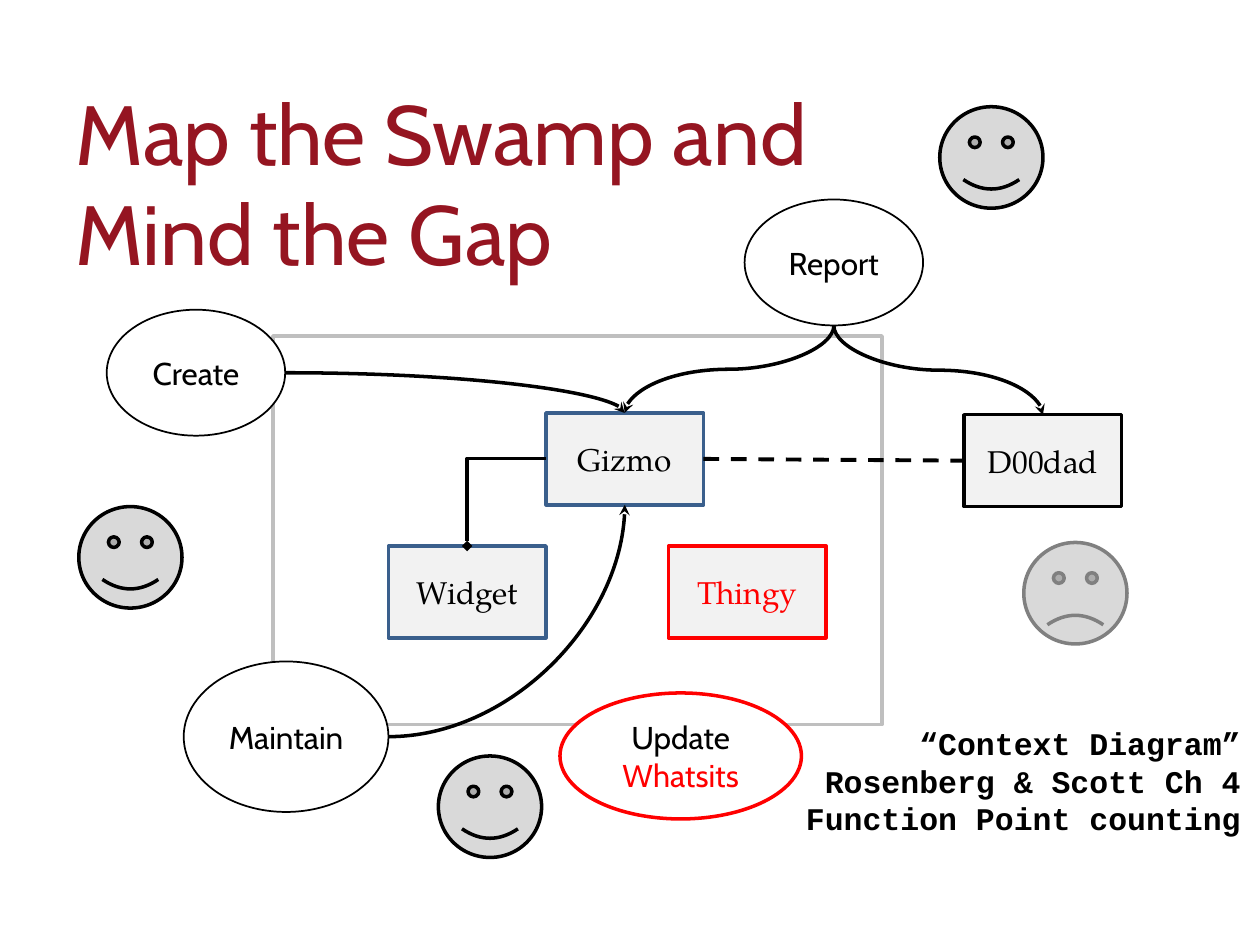
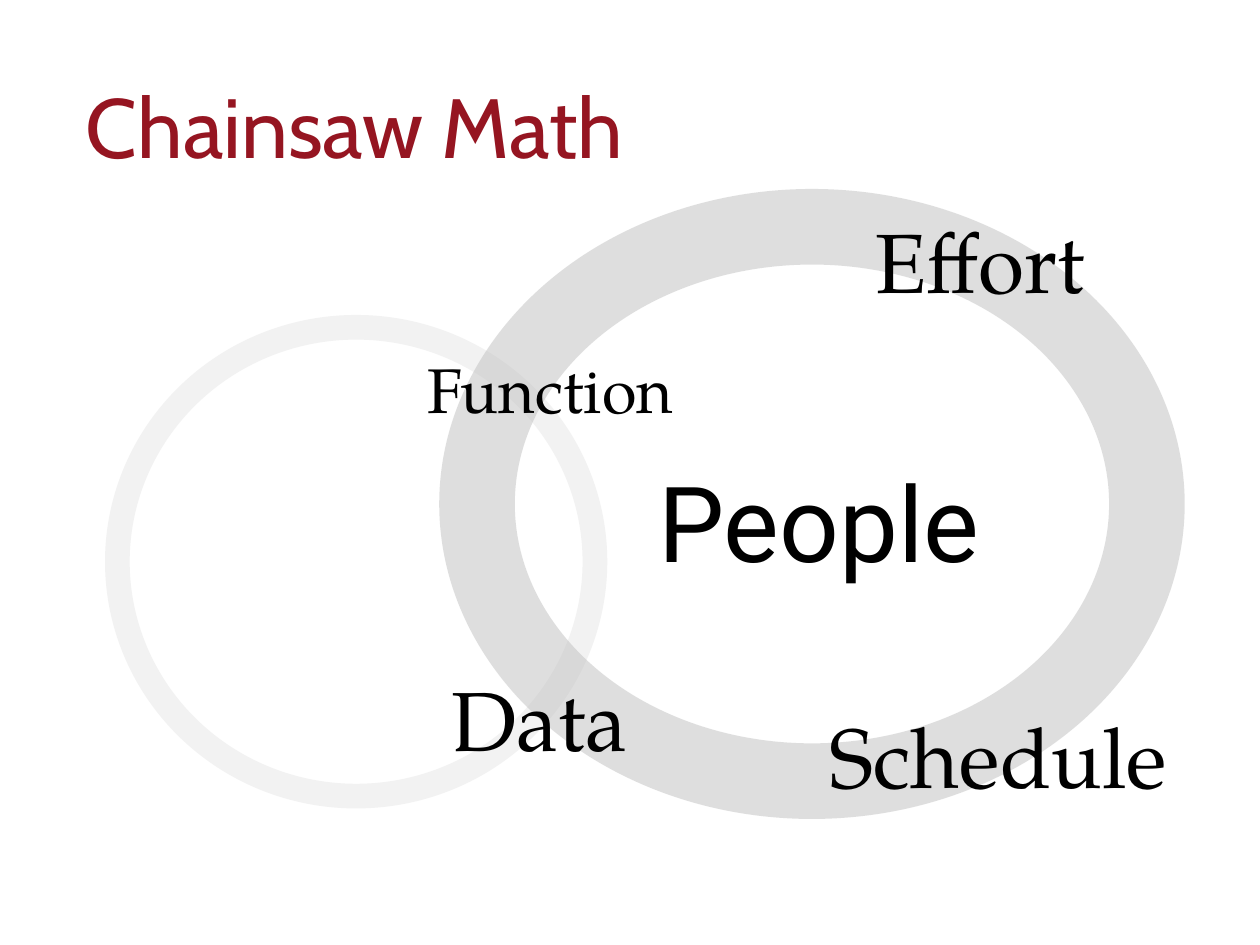
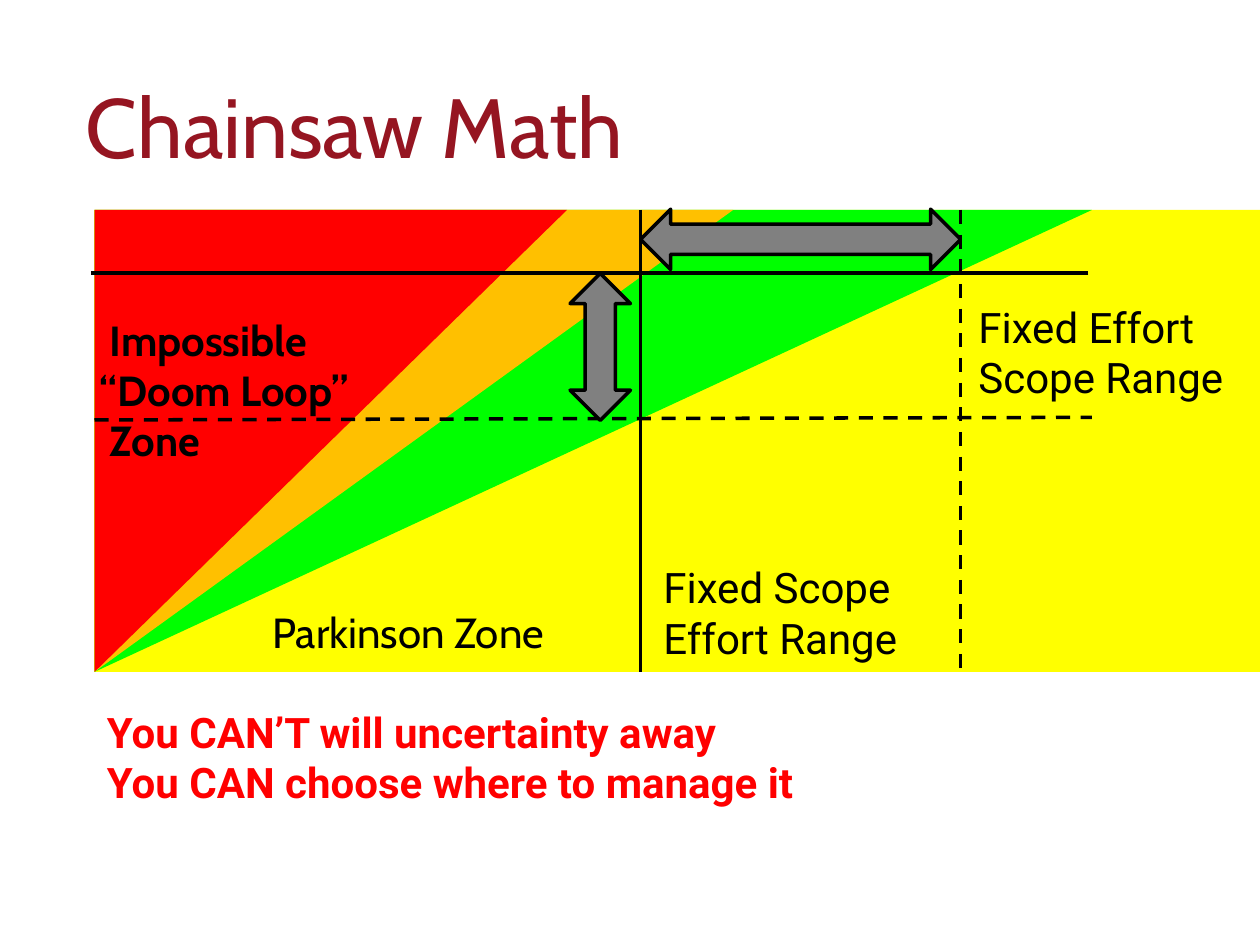
from dataclasses import dataclass

from pptx import Presentation
from pptx.dml import color as dml
from pptx.enum import dml as line_enum, shapes, text
from pptx.oxml import ns, xmlchemy
from pptx.util import Pt

KIND = shapes.MSO_SHAPE
LINK = shapes.MSO_CONNECTOR
ALIGN = text.PP_ALIGN
BLACK, WHITE, RED = "000000", "FFFFFF", "FF0000"
CRIMSON, STEEL = "951521", "3A5F8C"
SMOKE, MIST, SILVER, GREY = "F2F2F2", "D9D9D9", "BFBFBF", "808080"
YELLOW, GREEN, AMBER = "FFFF00", "00FF00", "FFC000"
SANS, SERIF, MONO, PLAIN = "Cabin", "TeX Gyre Pagella", "Courier New", "Roboto"


@dataclass
class Box:
    left: float
    top: float
    width: float
    height: float

    def inner(self, left, top, width, height):
        return Box(self.left + left, self.top + top, width, height)

    def point(self, x, y):
        return self.left + x, self.top + y

    def lengths(self):
        return [Pt(v) for v in (self.left, self.top, self.width, self.height)]


def rgb(value):
    return dml.RGBColor.from_string(value)


def child(parent, tag, **attributes):
    element = xmlchemy.OxmlElement(tag)
    for name, value in attributes.items():
        element.set(name, str(value))
    parent.append(element)


def write(frame, lines, font, size, colors=(BLACK,), bold=False, align=ALIGN.LEFT, indents=()):
    frame.text = "\n".join(lines)
    for i, paragraph in enumerate(frame.paragraphs):
        paragraph.alignment = align
        if i < len(indents):
            paragraph._p.get_or_add_pPr().set("marL", str(Pt(indents[i])))
        for run in paragraph.runs:
            run.font.name = font
            run.font.size = Pt(size)
            run.font.bold = bold
            run.font.color.rgb = rgb(colors[min(i, len(colors) - 1)])


def caption(slide, box, lines, font, size, **style):
    frame = slide.shapes.add_textbox(*box.lengths()).text_frame
    frame.word_wrap = False
    frame.auto_size = text.MSO_AUTO_SIZE.SHAPE_TO_FIT_TEXT
    write(frame, lines, font, size, **style)


def figure(slide, kind, box, fill, line=None, weight=2, adjust=None, alpha=None):
    shape = slide.shapes.add_shape(kind, *box.lengths())
    shape.shadow.inherit = False
    shape.fill.solid()
    shape.fill.fore_color.rgb = rgb(fill)
    if line:
        shape.line.color.rgb = rgb(line)
        shape.line.width = Pt(weight)
    else:
        shape.line.fill.background()
    if adjust is not None:
        shape.adjustments[0] = adjust
    if alpha:
        solid = shape.element.spPr.find(ns.qn("a:solidFill"))
        child(solid[0], "a:alpha", val=alpha * 1000)
    return shape


def labelled(slide, kind, box, lines, font, fill, line, weight=2, colors=(BLACK,)):
    shape = figure(slide, kind, box, fill, line, weight)
    shape.text_frame.vertical_anchor = text.MSO_ANCHOR.MIDDLE
    write(shape.text_frame, lines, font, 18, colors, align=ALIGN.CENTER)
    return shape


def connect(slide, start, end, kind=LINK.STRAIGHT, preset=None, tip=None, dashed=False, weight=2):
    link = slide.shapes.add_connector(kind, *[Pt(v) for v in (*start, *end)])
    link.line.color.rgb = rgb(BLACK)
    link.line.width = Pt(weight)
    if dashed:
        link.line.dash_style = line_enum.MSO_LINE.DASH
    properties = link.element.spPr
    if preset:
        properties.find(ns.qn("a:prstGeom")).set("prst", preset)
    if tip:
        child(properties.find(ns.qn("a:ln")), "a:tailEnd", type=tip)
    child(properties, "a:effectLst")
    return link


def connect_downwards(slide, start, end):
    dx, dy = end[0] - start[0], end[1] - start[1]
    x, y = (start[0] + end[0]) / 2, (start[1] + end[1]) / 2
    link = connect(slide, (x - dy / 2, y + dx / 2), (x + dy / 2, y - dx / 2),
                   LINK.CURVE, tip="stealth")
    link.element.spPr.find(ns.qn("a:xfrm")).set("rot", "5400000")


def title(slide, box, words):
    frame = slide.shapes.add_textbox(*box.lengths()).text_frame
    frame.word_wrap = True
    frame.vertical_anchor = text.MSO_ANCHOR.MIDDLE
    write(frame, words, SANS, 48, (CRIMSON,))


def context_map(slide, box):
    figure(slide, KIND.RECTANGLE, box.inner(111, 131, 348, 222), WHITE, SILVER)
    entities = {}
    for name, x, y, line, color in (
        ("Widget", 177, 251, STEEL, BLACK),
        ("Gizmo", 267, 175, STEEL, BLACK),
        ("D00dad", 506, 176, BLACK, BLACK),
        ("Thingy", 337, 251, RED, RED),
    ):
        entities[name] = labelled(slide, KIND.RECTANGLE, box.inner(x, y, 90, 52.5),
                                  [name], SERIF, SMOKE, line, colors=(color,))
    for words, place, line, weight in (
        (["Create"], (16, 116, 102, 72), BLACK, 1),
        (["Maintain"], (60, 317, 117, 86), BLACK, 1),
        (["Report"], (380.5, 53, 102, 72), BLACK, 1),
        (["Update", "Whatsits"], (275, 335, 138, 72), RED, 2),
    ):
        labelled(slide, KIND.OVAL, box.inner(*place), words, SANS, WHITE, line, weight, (BLACK, RED))

    gizmo_left, gizmo_right = box.point(267, 201), box.point(357, 201)
    gizmo_top, gizmo_bottom = box.point(312, 175), box.point(312, 227.5)
    doodad_left, doodad_top = box.point(506, 202), box.point(551, 176)
    report_bottom = box.point(431.5, 125)
    connect(slide, gizmo_left, box.point(222, 251), LINK.ELBOW, "bentConnector2", "diamond")
    relation = connect(slide, gizmo_right, doodad_left, dashed=True, weight=2.25)
    relation.begin_connect(entities["Gizmo"], 3)
    relation.end_connect(entities["D00dad"], 1)
    for start, end in ((box.point(118, 152), gizmo_top), (box.point(177, 360), gizmo_bottom)):
        connect(slide, start, end, LINK.CURVE, "curvedConnector2", "stealth")
    for end in (doodad_top, gizmo_top):
        connect_downwards(slide, report_bottom, end)

    for x, y, line, smile in (
        (540, 249, GREY, -0.05),
        (0, 228.5, BLACK, 0.05),
        (205.5, 371, BLACK, 0.05),
        (492, 0, BLACK, 0.05),
    ):
        figure(slide, KIND.SMILEY_FACE, box.inner(x, y, 59, 58), MIST, line, adjust=smile)


def rings(slide, box):
    figure(slide, KIND.DONUT, box.inner(0, 72, 287, 282), SMOKE, adjust=0.05)
    figure(slide, KIND.DONUT, box.inner(191, 0, 426, 360), SILVER, adjust=0.12, alpha=50)
    for word, place, font, size in (
        ("Function", (177, 89, 158, 51), SERIF, 36),
        ("Data", (191, 270, 116, 66), SERIF, 48),
        ("Effort", (433, 8, 138, 66), SERIF, 48),
        ("Schedule", (407, 291, 210, 66), SERIF, 48),
        ("People", (309, 150, 211, 80), PLAIN, 60),
    ):
        caption(slide, box.inner(*place), [word], font, size)


def zones(slide, box):
    figure(slide, KIND.RECTANGLE, box, YELLOW)
    for width, fill in ((570, GREEN), (365, AMBER), (270, RED)):
        wedge = figure(slide, KIND.ISOSCELES_TRIANGLE, box.inner(0, 0, width, box.height),
                       fill, adjust=0)
        wedge.element.spPr.find(ns.qn("a:xfrm")).set("flipV", "1")

    caption(slide, box.inner(-4, 56, 176, 94), ["Impossible", "“Doom Loop”", "Zone"],
            SANS, 24, bold=True, indents=(5.5, 0, 5.5))
    caption(slide, box.inner(79, 223, 185, 36), ["Parkinson Zone"], SANS, 24, align=ALIGN.RIGHT)

    scope, effort = 312, 495
    for start, end, dashed in (
        ((scope, 0), (scope, box.height), False),
        ((568, 36), (-2, 36), False),
        ((effort, 0), (effort, box.height), True),
        ((0, 120), (570, 118.5), True),
    ):
        connect(slide, box.point(*start), box.point(*end), dashed=dashed)
    for place, turn in (((scope, -0.5, effort - scope, 34.5), 0), ((247, 61, 84, 34.5), 90)):
        span = figure(slide, KIND.LEFT_RIGHT_ARROW, box.inner(*place), GREY, BLACK)
        span.rotation = turn

    caption(slide, box.inner(498, 48.5, 168, 66), ["Fixed Effort", "Scope Range"], PLAIN, 24)
    caption(slide, box.inner(318, 197.5, 171, 66), ["Fixed Scope", "Effort Range"], PLAIN, 24)


def main():
    deck = Presentation()
    deck.slide_width, deck.slide_height = Pt(720), Pt(540)
    swamp, venn, ranges = [deck.slides.add_slide(deck.slide_layouts[6]) for _ in range(3)]

    title(swamp, Box(36, 41, 648, 126), ["Map the Swamp and", "Mind the Gap"])
    caption(swamp, Box(452, 410, 264, 73),
            ["“Context Diagram”", "Rosenberg & Scott Ch 4", "Function Point counting"],
            MONO, 18, bold=True, align=ALIGN.RIGHT)
    context_map(swamp, Box(45, 61, 600, 429))

    rings(venn, Box(60, 108, 617, 360))
    zones(ranges, Box(54, 120, 666, 264))
    for slide in (venn, ranges):
        title(slide, Box(42, 35, 648, 73), ["Chainsaw Math"])
    caption(ranges, Box(54, 400, 464, 66),
            ["You CAN’T will uncertainty away", "You CAN choose where to manage it"],
            PLAIN, 24, colors=(RED,), bold=True)
    deck.save("out.pptx")


if __name__ == "__main__":
    main()
